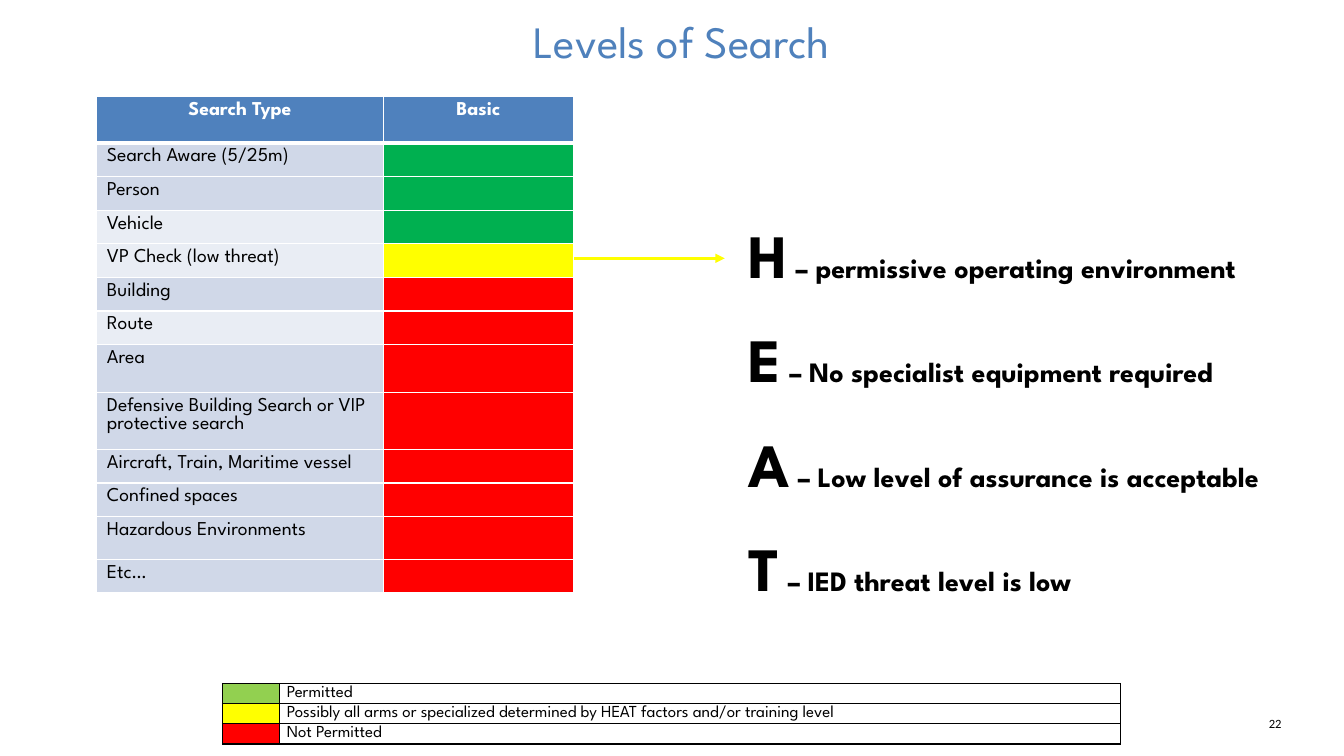
from lxml import etree
from pptx import Presentation
from pptx.dml.color import RGBColor
from pptx.enum.shapes import MSO_CONNECTOR
from pptx.enum.text import MSO_ANCHOR, MSO_AUTO_SIZE, PP_ALIGN
from pptx.oxml.ns import qn
from pptx.util import Pt

STRAIGHT = MSO_CONNECTOR.STRAIGHT
TOP, MIDDLE = MSO_ANCHOR.TOP, MSO_ANCHOR.MIDDLE
LEFT, CENTER, RIGHT = PP_ALIGN.LEFT, PP_ALIGN.CENTER, PP_ALIGN.RIGHT
NO_AUTOFIT = MSO_AUTO_SIZE.NONE

BLACK = RGBColor(0x00, 0x00, 0x00)
WHITE = RGBColor(0xFF, 0xFF, 0xFF)
TITLE_BLUE = RGBColor(0x4F, 0x81, 0xBC)
HEADER_BLUE = RGBColor(0x4F, 0x81, 0xBD)
BAND_DARK = RGBColor(0xD0, 0xD8, 0xE8)
BAND_LIGHT = RGBColor(0xE9, 0xED, 0xF4)
GREEN = RGBColor(0x00, 0xB0, 0x50)
LIGHT_GREEN = RGBColor(0x92, 0xD0, 0x50)
YELLOW = RGBColor(0xFF, 0xFF, 0x00)
RED = RGBColor(0xFF, 0x00, 0x00)
FONT = "League Spartan"

TITLE = "Levels of Search"
PAGE_NUMBER = "22"
SEARCH_HEADER = ("Search Type", "Basic")
HEADER_HEIGHT = 33
SEARCH_ROWS = [  # label, band, permission, height
    ("Search Aware (5/25m)", BAND_DARK, GREEN, 24),
    ("Person", BAND_DARK, GREEN, 24),
    ("Vehicle", BAND_LIGHT, GREEN, 24),
    ("VP Check (low threat)", BAND_LIGHT, YELLOW, 24),
    ("Building", BAND_DARK, RED, 24),
    ("Route", BAND_LIGHT, RED, 24),
    ("Area", BAND_DARK, RED, 34.5),
    ("Defensive Building Search or VIP protective search", BAND_DARK, RED, 40.5),
    ("Aircraft, Train, Maritime vessel", BAND_DARK, RED, 24),
    ("Confined spaces", BAND_DARK, RED, 24),
    ("Hazardous Environments", BAND_DARK, RED, 30.5),
    ("Etc…", BAND_DARK, RED, 24),
]
LEGEND = [
    (LIGHT_GREEN, "Permitted"),
    (YELLOW, "Possibly all arms or specialized determined by HEAT factors and/or training level"),
    (RED, "Not Permitted"),
]
HEAT_FACTORS = [
    ("H", " – permissive operating environment"),
    ("E", " – No specialist equipment required"),
    ("A", " – Low level of assurance is acceptable"),
    ("T", " – IED threat level is low"),
]


def place(shape, left, top, width, height):
    shape.left, shape.top = Pt(left), Pt(top)
    shape.width, shape.height = Pt(width), Pt(height)


def add_run(paragraph, text, size, color=BLACK, bold=False, font=FONT):
    run = paragraph.add_run()
    run.text = text
    run.font.name = font
    run.font.size = Pt(size)
    run.font.bold = bold
    run.font.color.rgb = color


def add_table(left, top, columns, heights):
    """Add a table without a built-in style, ready for explicit cell formatting."""
    frame = slide.shapes.add_table(len(heights), len(columns), Pt(left), Pt(top),
                                   Pt(sum(columns)), Pt(sum(heights)))
    table = frame.table
    table.first_row = table.horz_banding = False
    for column, width in zip(table.columns, columns):
        column.width = Pt(width)
    for row, height in zip(table.rows, heights):
        row.height = Pt(height)
    return table


def format_cell(cell, fill, text, size, border, top=1, bottom=1,
                color=BLACK, bold=False, align=LEFT):
    properties = cell._tc.get_or_add_tcPr()
    for side, width in (("L", 1), ("R", 1), ("T", top), ("B", bottom)):
        line = etree.SubElement(properties, qn(f"a:ln{side}"), w=str(Pt(width)))
        solid = etree.SubElement(line, qn("a:solidFill"))
        etree.SubElement(solid, qn("a:srgbClr"), val=str(border))
    cell.fill.solid()
    cell.fill.fore_color.rgb = fill
    paragraph = cell.text_frame.paragraphs[0]
    paragraph.alignment = align
    if text:
        paragraph.space_after = Pt(6)
        add_run(paragraph, text, size, color, bold)
    else:
        # Small empty text keeps the row from growing
        etree.SubElement(paragraph._p, qn("a:endParaRPr"), sz=str(size * 100))


presentation = Presentation()
presentation.slide_width, presentation.slide_height = Pt(960), Pt(540)
slide = presentation.slides.add_slide(presentation.slide_layouts[1])

# Title
title = slide.shapes.title
place(title, 228, 6, 518, 46)
title.text_frame.auto_size = NO_AUTOFIT
heading = title.text_frame.paragraphs[0]
heading.alignment = CENTER
add_run(heading, TITLE, 32, TITLE_BLUE)

# HEAT factors
heat = slide.placeholders[1]
place(heat, 509.75, 135.4, 440, 239)
heat_frame = heat.text_frame
heat_frame.auto_size = NO_AUTOFIT
heat_frame.vertical_anchor = TOP
for index, (letter, meaning) in enumerate(HEAT_FACTORS):
    paragraph = heat_frame.add_paragraph() if index else heat_frame.paragraphs[0]
    properties = paragraph._p.get_or_add_pPr()
    properties.set("marL", str(Pt(18)))
    properties.set("indent", "0")
    etree.SubElement(properties, qn("a:buNone"))
    paragraph.line_spacing = 1.3
    paragraph.space_before = Pt(0)
    paragraph.space_after = Pt(6)
    add_run(paragraph, letter, 44, bold=True)
    add_run(paragraph, meaning, 20, bold=True)

# Legend
legend = add_table(159, 488.2, (40.5, 601), [14.4] * len(LEGEND))
for row, entry in enumerate(LEGEND):
    color, meaning = entry
    for column, (fill, text) in enumerate(((color, ""), (WHITE, meaning))):
        cell = legend.cell(row, column)
        cell.margin_left = cell.margin_right = Pt(5.4)
        cell.margin_top = cell.margin_bottom = Pt(0)
        cell.vertical_anchor = MIDDLE
        format_cell(cell, fill, text, 12 if text else 8, BLACK)

# Arrow from the VP check row to the HEAT factors
arrow = slide.shapes.add_connector(STRAIGHT, Pt(409.7), Pt(184.5), Pt(517.7), Pt(184.5))
arrow.line.color.rgb = YELLOW
arrow.line.width = Pt(2.25)
etree.SubElement(arrow.line._get_or_add_ln(), qn("a:tailEnd"), type="triangle")
etree.SubElement(arrow._element.spPr, qn("a:effectLst"))

# Search levels
search = add_table(69.2, 69.2, (204.5, 136),
                   [HEADER_HEIGHT] + [height for *_, height in SEARCH_ROWS])
for column, text in enumerate(SEARCH_HEADER):
    format_cell(search.cell(0, column), HEADER_BLUE, text, 14, WHITE, bottom=3,
                color=WHITE, bold=True, align=CENTER)
for row, (label, band, permission, _) in enumerate(SEARCH_ROWS, start=1):
    top_border = 3 if row == 1 else 1
    format_cell(search.cell(row, 0), band, label, 14, WHITE, top=top_border)
    format_cell(search.cell(row, 1), permission, "", 12, WHITE, top=top_border)

# Page number
number = slide.shapes.add_textbox(Pt(870), Pt(507.6), Pt(52.5), Pt(18))
number.text_frame.word_wrap = True
number_paragraph = number.text_frame.paragraphs[0]
number_paragraph.alignment = RIGHT
add_run(number_paragraph, PAGE_NUMBER, 9, font="Calibri")

presentation.save("out.pptx")
